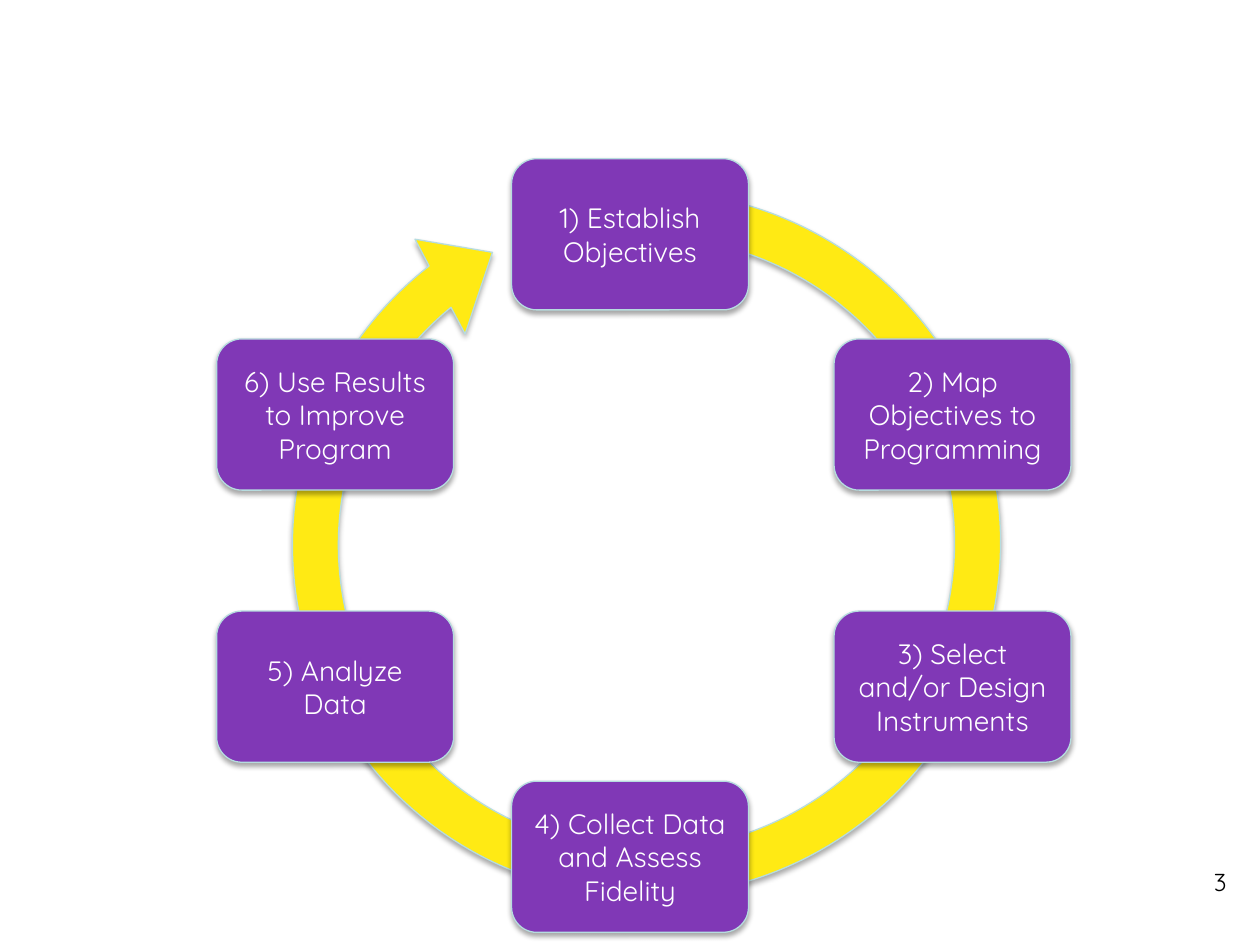
from lxml.etree import SubElement
from pptx import Presentation
from pptx.dml.color import RGBColor
from pptx.enum.shapes import MSO_SHAPE
from pptx.enum.text import MSO_ANCHOR, PP_ALIGN
from pptx.oxml.ns import qn
from pptx.util import Pt

PURPLE = RGBColor(0x80, 0x38, 0xB6)
YELLOW = RGBColor(0xFF, 0xEA, 0x14)
EDGE = RGBColor(0xB6, 0xDC, 0xDF)
WHITE = RGBColor(0xFF, 0xFF, 0xFF)
BLACK = RGBColor(0, 0, 0)
FONT = "Quicksand"

STEP_W, STEP_H = 135.4, 86.4
LEFT, MID, RIGHT = 123.8, 292.3, 476.6
TOP, UPPER, LOWER, BASE = 90.7, 193.7, 349.2, 446.4
STEPS = [
    ("1) Establish Objectives", MID, TOP),
    ("2) Map Objectives to Programming", RIGHT, UPPER),
    ("3) Select and/or Design Instruments", RIGHT, LOWER),
    ("4) Collect Data and Assess Fidelity", MID, BASE),
    ("5) Analyze Data", LEFT, LOWER),
    ("6) Use Results to Improve Program", LEFT, UPPER),
]


def add_text(frame, text, size, color, align):
    """Write one run of text into the frame."""
    frame.word_wrap = True
    para = frame.paragraphs[0]
    para.alignment = align
    run = para.add_run()
    run.text = text
    run.font.name = FONT
    run.font.size = Pt(size)
    run.font.color.rgb = color


def add_shadow(shape):
    """Give the shape a soft shadow straight below it."""
    shape.shadow.inherit = False
    effects = shape._element.spPr.find(qn("a:effectLst"))
    outer = SubElement(effects, qn("a:outerShdw"), blurRad=str(Pt(3.1)),
                       dist=str(Pt(1.8)), dir="5400000", rotWithShape="0")
    color = SubElement(outer, qn("a:srgbClr"), val="000000")
    SubElement(color, qn("a:alpha"), val="35000")


def add_solid(slide, kind, box, fill):
    """Add an outlined, shadowed shape in the box."""
    shape = slide.shapes.add_shape(kind, *map(Pt, box))
    shape.fill.solid()
    shape.fill.fore_color.rgb = fill
    shape.line.color.rgb = EDGE
    shape.line.width = Pt(0.75)
    add_shadow(shape)
    return shape


def add_ring(slide, box):
    """Add the circular arrow that runs behind the steps."""
    ring = add_solid(slide, MSO_SHAPE.CIRCULAR_ARROW, box, YELLOW)
    ring.rotation = 250.3
    for i, value in enumerate((0.06, 6.54, 204.56, 3.22, 0.07)):
        ring.adjustments[i] = value


def add_step(slide, box, text):
    """Add one labelled step of the cycle."""
    step = add_solid(slide, MSO_SHAPE.ROUNDED_RECTANGLE, box, PURPLE)
    step.text_frame.vertical_anchor = MSO_ANCHOR.MIDDLE
    add_text(step.text_frame, text, 16, WHITE, PP_ALIGN.CENTER)


def add_number(slide, box, text):
    """Add the page number."""
    label = slide.shapes.add_textbox(*map(Pt, box))
    add_text(label.text_frame, text, 14, BLACK, PP_ALIGN.RIGHT)


def main():
    """Build the slide and save it."""
    deck = Presentation()
    deck.slide_width, deck.slide_height = Pt(720), Pt(540)
    slide = deck.slides.add_slide(deck.slide_layouts[6])
    add_number(slide, (540, 491.8, 168, 37.4), "3")
    add_ring(slide, (150.5, 90.7, 437.8, 439.9))
    for text, left, top in STEPS:
        add_step(slide, (left, top, STEP_W, STEP_H), text)
    deck.save("out.pptx")


if __name__ == "__main__":
    main()
